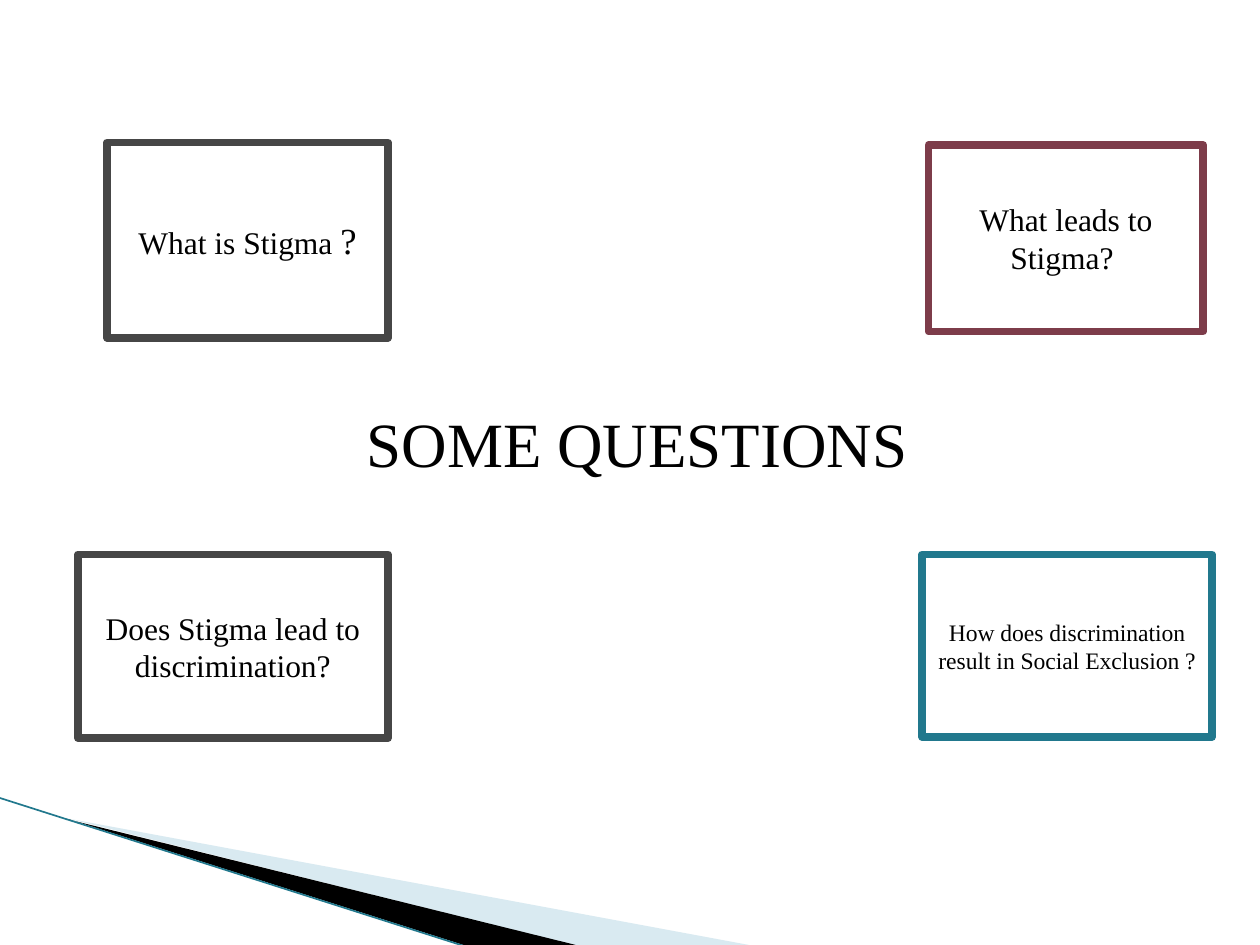
from lxml.etree import SubElement
from pptx import Presentation
from pptx.dml.color import RGBColor
from pptx.enum.shapes import MSO_CONNECTOR, MSO_SHAPE
from pptx.enum.text import MSO_ANCHOR, PP_ALIGN
from pptx.oxml.ns import qn
from pptx.util import Pt

COLORS = {
    "black": "000000",
    "white": "FFFFFF",
    "gray": "464646",
    "plum": "7D3C4A",
    "teal": "21788D",
    "pale": "A0CBDC",
}


class SlideBuilder:
    font_name = "Times New Roman"
    border = 4.33

    def __init__(self, slide):
        self.slide = slide

    def color(self, name):
        return RGBColor.from_string(COLORS[name])

    def paint(self, shape, name):
        shape.shadow.inherit = False
        shape.fill.solid()
        shape.fill.fore_color.rgb = self.color(name)

    def style(self, span, size):
        span.font.name = self.font_name
        span.font.size = Pt(size)
        span.font.color.rgb = self.color("black")

    def title(self, text, left, top, width, height, size):
        title = self.slide.shapes.title
        title.left, title.top = Pt(left), Pt(top)
        title.width, title.height = Pt(width), Pt(height)
        frame = title.text_frame
        frame.text = text
        frame.word_wrap = True
        frame.vertical_anchor = MSO_ANCHOR.MIDDLE
        para = frame.paragraphs[0]
        para.alignment = PP_ALIGN.LEFT
        self.style(para.runs[0], size)

    def wedge(self, points, name, opacity=100):
        outline = self.slide.shapes.build_freeform(*points[0], scale=Pt(1))
        outline.add_line_segments(points[1:], close=True)
        shape = outline.convert_to_shape()
        self.paint(shape, name)
        shape.line.fill.background()
        if opacity < 100:
            tint = shape.fill._xPr.find(".//" + qn("a:srgbClr"))
            SubElement(tint, qn("a:alpha"), val=str(opacity * 1000))

    def line(self, start, end, name, width):
        points = [Pt(value) for value in (*start, *end)]
        line = self.slide.shapes.add_connector(MSO_CONNECTOR.STRAIGHT, *points)
        line.line.color.rgb = self.color(name)
        line.line.width = Pt(width)
        SubElement(line._element.spPr, qn("a:effectLst"))

    def question(self, place, name, spans):
        box = self.slide.shapes.add_shape(
            MSO_SHAPE.RECTANGLE, *[Pt(value) for value in place])
        self.paint(box, "white")
        box.line.color.rgb = self.color(name)
        box.line.width = Pt(self.border)
        SubElement(box.line._get_or_add_ln(), qn("a:round"))
        frame = box.text_frame
        frame.word_wrap = True
        frame.vertical_anchor = MSO_ANCHOR.MIDDLE
        para = frame.paragraphs[0]
        para.alignment = PP_ALIGN.CENTER
        for text, size in spans:
            span = para.add_run()
            span.text = text
            self.style(span, size)


def main():
    deck = Presentation()
    deck.slide_width, deck.slide_height = Pt(720), Pt(540)
    page = SlideBuilder(deck.slides.add_slide(deck.slide_layouts[5]))

    # Corner decoration
    page.wedge([(39.6, 468.5), (428.4, 540.5), (328.3, 540.5), (39.6, 468)],
               "pale", opacity=40)
    page.wedge([(38.2, 467.5), (329, 540.5), (267.8, 541.2), (38.9, 468)],
               "black")
    page.line((-0.7, 455.8), (267.1, 541.2), "teal", 0.95)

    # Central title
    page.title("SOME QUESTIONS", 202.3, 227.5, 364.3, 51, 36)

    # Questions around the title
    questions = [
        ((61.2, 81.4, 160.6, 111.6), "gray",
         [("What is Stigma ", 18), ("?", 21)]),
        ((44.6, 316.8, 177.1, 105.1), "gray",
         [("Does Stigma lead to discrimination?", 18)]),
        ((530.6, 82.8, 157, 106.6), "plum",
         [("What leads to Stigma? ", 18)]),
        ((527, 316.8, 165.6, 104.4), "teal",
         [("How does discrimination result in Social Exclusion ?", 13.5)]),
    ]
    for place, name, spans in questions:
        page.question(place, name, spans)

    deck.save("out.pptx")


if __name__ == "__main__":
    main()
